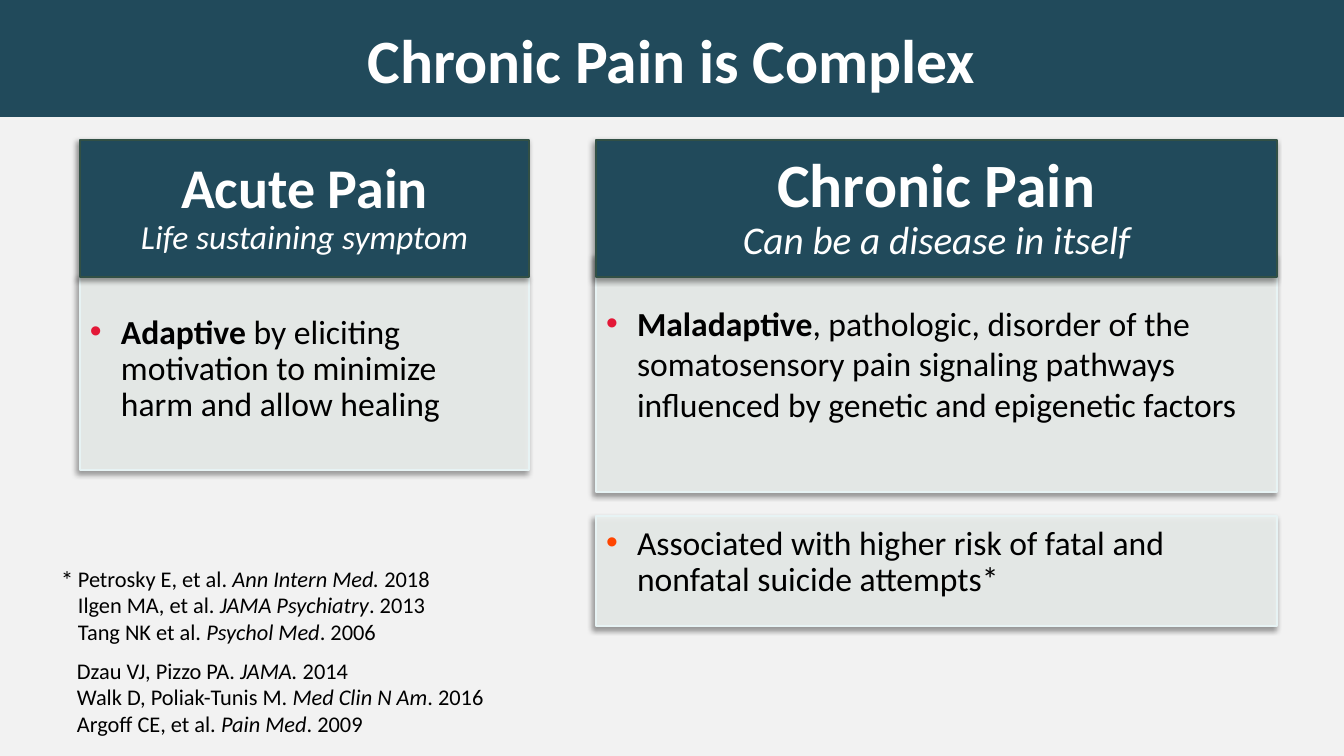
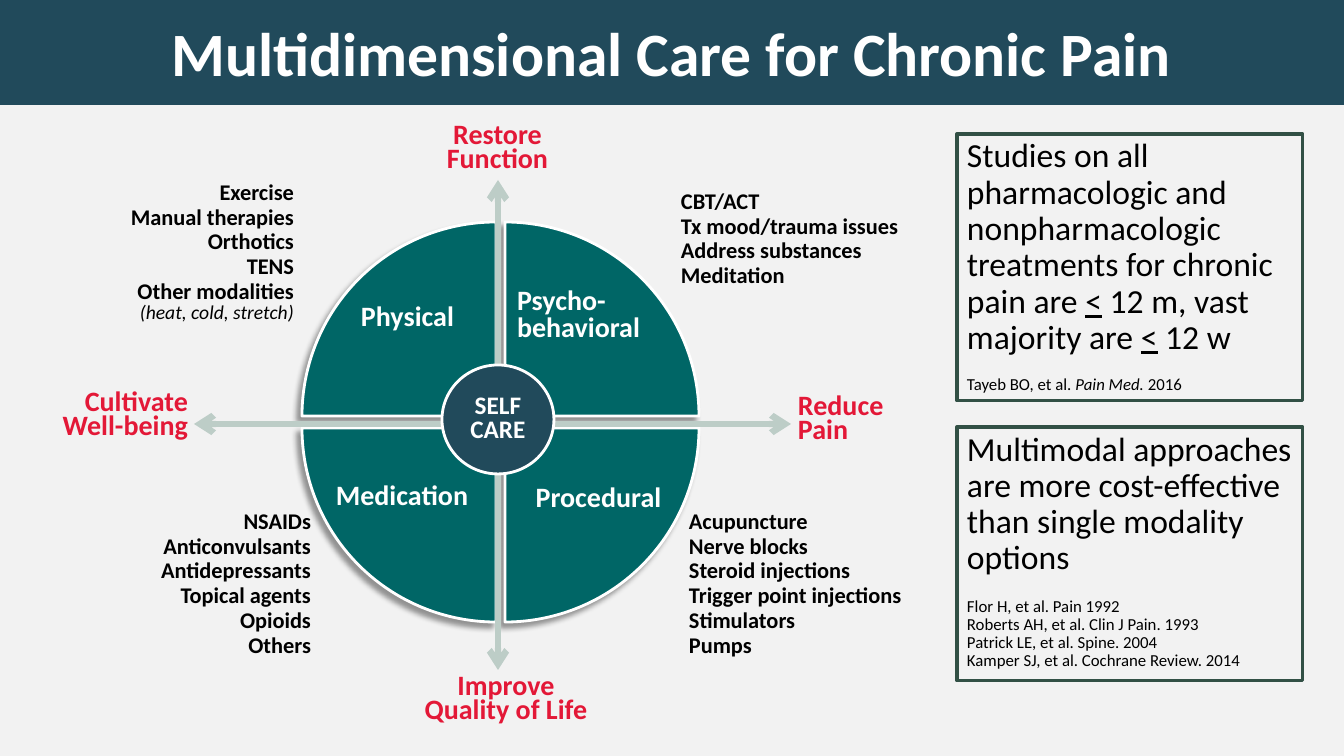
from lxml.etree import SubElement
from pptx import Presentation
from pptx.dml.color import RGBColor
from pptx.enum.shapes import MSO_CONNECTOR as Connector, MSO_SHAPE as Shape
from pptx.enum.text import MSO_ANCHOR as Anchor, PP_ALIGN as Align
from pptx.oxml.ns import qn
from pptx.util import Pt

PX = 9071
FONT = "Calibri"
NAVY = "214A5B"
TEAL = "006666"
WHITE = "FFFFFF"
BLACK = "000000"
RED = "E31837"
ORANGE = "FF4500"
SAGE = "BDCDC7"
FRAME = "325045"
PANEL = "ECF0EE"
PANEL_EDGE = "E7F3F4"
BACKGROUND = "F2F2F2"
hex_color = RGBColor.from_string


def add_box(slide, kind, box, fill=None, line=None, line_width=2, opacity=100, shadow=0):
    left, top, width, height = [value * PX for value in box]
    if kind is None:
        return slide.shapes.add_textbox(left, top, width, height)
    shape = slide.shapes.add_shape(kind, left, top, width, height)
    shape.shadow.inherit = False
    if fill:
        shape.fill.solid()
        shape.fill.fore_color.rgb = hex_color(fill)
        if opacity < 100:
            color = shape.fill._xPr.find(qn("a:solidFill"))[0]
            SubElement(color, qn("a:alpha"), val=str(opacity * 1000))
    else:
        shape.fill.background()
    if line:
        shape.line.color.rgb = hex_color(line)
        shape.line.width = Pt(line_width)
    else:
        shape.line.fill.background()
    if shadow:
        effects = shape._element.spPr.find(qn("a:effectLst"))
        outer = SubElement(effects, qn("a:outerShdw"), blurRad=str(Pt(4)), dist=str(Pt(shadow)),
                           dir="8100000", algn="tr", rotWithShape="0")
        color = SubElement(outer, qn("a:srgbClr"), val=BLACK)
        SubElement(color, qn("a:alpha"), val="40000")
    return shape


def write(shape, text, size=16, color=BLACK, bold=False, italic=False, accent="italic",
          align=Align.LEFT, anchor=Anchor.TOP, spacing=1.0, before=0, after=0,
          margins=(10, 5, 10, 5), bullet=None):
    frame = shape.text_frame
    frame.word_wrap = True
    frame.vertical_anchor = anchor
    frame.margin_left, frame.margin_top, frame.margin_right, frame.margin_bottom = [
        value * PX for value in margins]
    for index, content in enumerate(text.split("\n")):
        paragraph = frame.add_paragraph() if frame.text else frame.paragraphs[0]
        paragraph.alignment = align
        paragraph.line_spacing = spacing
        paragraph.space_before = Pt(before if index == 0 else 0)
        paragraph.space_after = Pt(after)
        if bullet:
            properties = paragraph._p.get_or_add_pPr()
            properties.set("marL", str(31 * PX))
            properties.set("indent", str(-31 * PX))
            SubElement(SubElement(properties, qn("a:buClr")), qn("a:srgbClr"), val=bullet)
            SubElement(properties, qn("a:buFont"), typeface="Arial")
            SubElement(properties, qn("a:buChar"), char="•")
        for position, piece in enumerate(content.split("|")):
            if not piece:
                continue
            run = paragraph.add_run()
            run.text = piece
            font = run.font
            font.name = FONT
            font.size = Pt(size)
            font.color.rgb = hex_color(color)
            font.bold = bold
            font.italic = italic
            if position % 2:
                setattr(font, accent, True)


presentation = Presentation()
presentation.slide_width = 1344 * PX
presentation.slide_height = 756 * PX
master_fill = presentation.slide_master.background.fill
master_fill.solid()
master_fill.fore_color.rgb = hex_color(BACKGROUND)

slides = []
for title, top, height in [
    ("Chronic Pain is Complex", 0, 117),
    ("Multidimensional Care for Chronic Pain", -2, 107),
]:
    slide = presentation.slides.add_slide(presentation.slide_layouts[6])
    band = add_box(slide, Shape.RECTANGLE, (0, top, 1344, height), fill=NAVY)
    write(band, title, size=44, color=WHITE, bold=True, align=Align.CENTER, anchor=Anchor.MIDDLE)
    slides.append(slide)
complex_slide, care_slide = slides

panel_style = dict(fill=PANEL, line=PANEL_EDGE, opacity=90, shadow=3)
pain_columns = [
    (80, 449, 277, 193, "Acute Pain", 40, "Life sustaining symptom", 24, 38, 0.9,
     "|Adaptive |by eliciting motivation to minimize harm and allow healing"),
    (596, 681, 255, 237, "Chronic Pain", 44, "Can be a disease in itself", 28, 48, 1.0,
     "|Maladaptive|, pathologic, disorder of the somatosensory pain signaling pathways "
     "influenced by genetic and epigenetic factors"),
]
for (left, width, top, height, heading, heading_size, subtitle, subtitle_size,
     inset, spacing, description) in pain_columns:
    panel = add_box(complex_slide, Shape.RECTANGLE, (left, top, width, height), **panel_style)
    write(panel, description, size=24, accent="bold", spacing=spacing, bullet=RED,
          margins=(10, inset, 14, 16))
    header = add_box(complex_slide, Shape.RECTANGLE, (left, 140, width, 137),
                     fill=NAVY, line=FRAME, shadow=3)
    header_style = dict(color=WHITE, align=Align.CENTER, anchor=Anchor.MIDDLE, spacing=0.9,
                        margins=(22, 12, 22, 12))
    write(header, heading, size=heading_size, bold=True, **header_style)
    write(header, subtitle, size=subtitle_size, italic=True, **header_style)

risk_panel = add_box(complex_slide, Shape.RECTANGLE, (596, 516, 681, 110), **panel_style)
write(risk_panel, "Associated with higher risk of fatal and nonfatal suicide attempts*",
      size=24, spacing=0.9, bullet=ORANGE, margins=(10, 10, 14, 16))

write(add_box(complex_slide, None, (51, 559, 34, 40)), "*", size=18)
for left, top, references in [
    (68, 559, "Petrosky E, et al. |Ann Intern Med. |2018\n"
              "Ilgen MA, et al. |JAMA Psychiatry|. 2013\n"
              "Tang NK et al. |Psychol Med|. 2006"),
    (67, 651, "Dzau VJ, Pizzo PA. |JAMA. |2014\n"
              "Walk D, Poliak-Tunis M. |Med Clin N Am|. 2016\n"
              "Argoff CE, et al. |Pain Med|. 2009"),
]:
    write(add_box(complex_slide, None, (left, top, 433, 92)), references, anchor=Anchor.MIDDLE)

for left, top, rotation in [(302, 222, 0), (505, 222, 90), (505, 428, 180), (302, 428, 270)]:
    wedge = add_box(care_slide, Shape.PIE_WEDGE, (left, top, 194, 194),
                    fill=TEAL, line=WHITE, shadow=5)
    wedge.rotation = rotation

for label, box, align, spacing in [
    ("Physical", (332, 293, 151, 44), Align.CENTER, 1.0),
    ("Medication", (301, 476, 202, 40), Align.CENTER, 0.9),
    ("Procedural", (500, 481, 197, 37), Align.CENTER, 0.8),
    ("Psycho-behavioral", (507, 284, 185, 65), Align.LEFT, 0.8),
]:
    write(add_box(care_slide, None, box), label, size=20, color=WHITE, bold=True,
          align=align, spacing=spacing)

for treatments, box, align in [
    ("Exercise\nManual therapies\nOrthotics\nTENS", (20, 178, 284, 154), Align.RIGHT),
    ("NSAIDs\nAnticonvulsants\nAntidepressants\nTopical agents\nOpioids\nOthers",
     (89, 507, 232, 161), Align.RIGHT),
    ("Acupuncture\nNerve blocks\nSteroid injections\nTrigger point injections\nStimulators\nPumps",
     (679, 507, 266, 161), Align.LEFT),
    ("CBT/ACT\nTx mood/trauma issues\nAddress substances\nMeditation",
     (671, 187, 274, 109), Align.LEFT),
]:
    treatment_list = add_box(care_slide, None, box)
    write(treatment_list, treatments, bold=True, align=align, spacing=0.8, after=2.4)
    if treatments.startswith("Exercise"):
        write(treatment_list, "Other modalities", bold=True, align=align, spacing=0.8)
        write(treatment_list, "(heat, cold, stretch)", size=14, italic=True, align=align,
              spacing=0.8)

for goal, box, align in [
    ("Cultivate\nWell-being", (0, 388, 198, 57), Align.RIGHT),
    ("Reduce Pain", (788, 392, 137, 57), Align.LEFT),
    ("Improve\nQuality of Life", (390, 672, 232, 57), Align.CENTER),
    ("Restore Function", (419, 121, 157, 57), Align.CENTER),
]:
    write(add_box(care_slide, None, box), goal, size=20, color=RED, bold=True,
          align=align, spacing=0.7)

for ends in [(194, 424, 791, 424), (498, 180, 498, 670)]:
    axis = care_slide.shapes.add_connector(Connector.STRAIGHT, *[value * PX for value in ends])
    axis.line.color.rgb = hex_color(SAGE)
    axis.line.width = Pt(4.5)
    outline = axis.line._get_or_add_ln()
    SubElement(outline, qn("a:headEnd"), type="arrow")
    SubElement(outline, qn("a:tailEnd"), type="arrow")
    SubElement(axis._element.spPr, qn("a:effectLst"))

hub = add_box(care_slide, Shape.OVAL, (442, 365, 112, 109), fill=NAVY, line=WHITE)
write(hub, "SELF\nCARE", size=18, color=WHITE, bold=True, align=Align.CENTER,
      anchor=Anchor.MIDDLE, spacing=0.8, margins=(0, 0, 0, 0))

for top, height, finding, references, gap, spacing in [
    (134, 267, "Studies on all pharmacologic and nonpharmacologic treatments for chronic pain "
               "are |<| 12 m, vast majority are |<| 12 w",
     "Tayeb BO, et al. |Pain Med. |2016", 12, 1.0),
    (427, 254, "Multimodal approaches are more cost-effective than single modality options",
     "Flor H, et al. Pain 1992\nRoberts AH, et al. Clin J Pain. 1993\n"
     "Patrick LE, et al. Spine. 2004\nKamper SJ, et al. Cochrane Review. 2014", 15, 0.9),
]:
    evidence = add_box(care_slide, Shape.RECTANGLE, (957, top, 346, height),
                       line=FRAME, line_width=2.25)
    write(evidence, finding, size=24, accent="underline", spacing=0.9)
    write(evidence, references, size=12, before=gap, spacing=spacing)

presentation.save("out.pptx")
